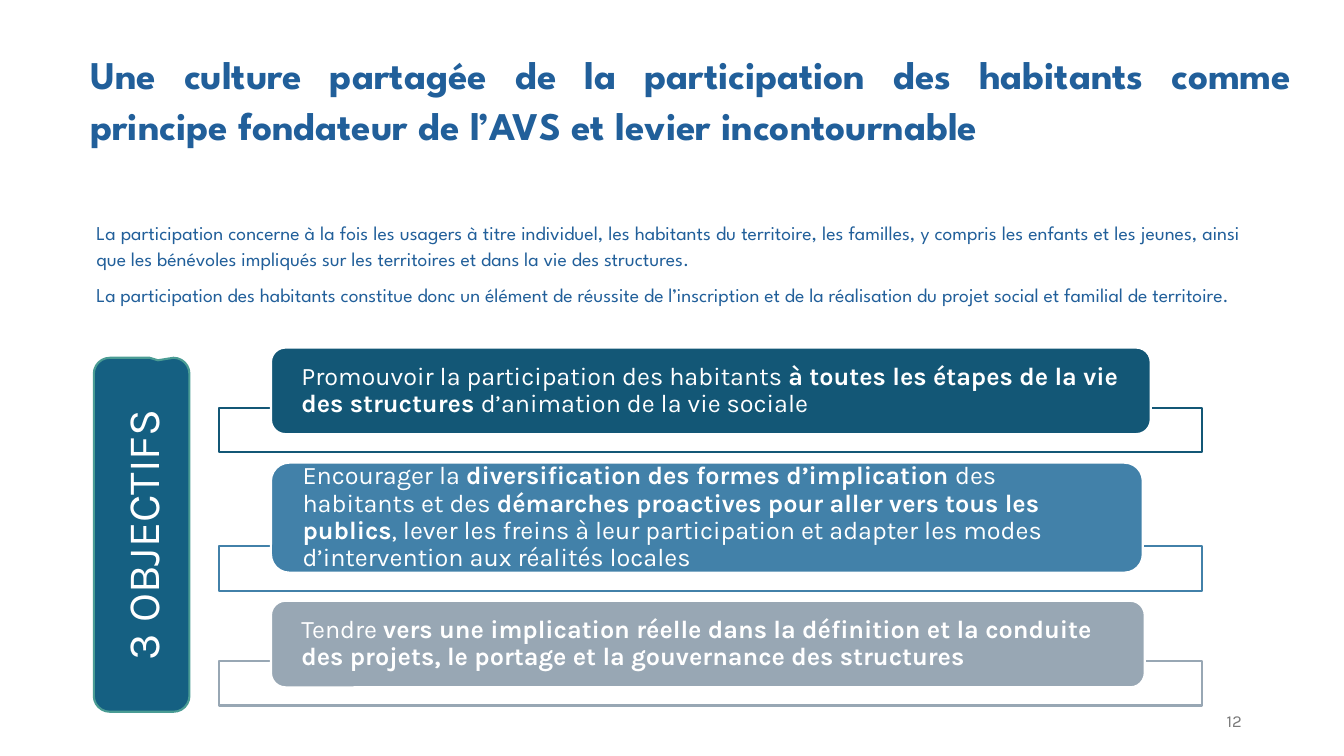
import pptx
import pptx.util
import pptx.dml.color
import pptx.enum.shapes
import pptx.enum.text
import pptx.oxml.ns
from lxml import etree

Cm = pptx.util.Cm
Pt = pptx.util.Pt
RGBColor = pptx.dml.color.RGBColor
SHAPE = pptx.enum.shapes.MSO_SHAPE
ALIGN = pptx.enum.text.PP_ALIGN
MIDDLE = pptx.enum.text.MSO_ANCHOR.MIDDLE

WHITE = RGBColor(0xFF, 0xFF, 0xFF)
TEXT_BLUE = RGBColor(0x21, 0x5F, 0x9A)
GREY = RGBColor(0x79, 0x79, 0x79)
DEEP_BLUE = RGBColor(0x13, 0x57, 0x76)
MID_BLUE = RGBColor(0x42, 0x81, 0xA9)
BLUE_GREY = RGBColor(0x98, 0xA7, 0xB4)
BANNER_BLUE = RGBColor(0x15, 0x60, 0x82)
BANNER_EDGE = RGBColor(0x4A, 0x9C, 0x94)

TITLE = ("Une culture partagée de la participation des habitants comme "
         "principe fondateur de l’AVS et levier incontournable")
INTRO = [
    "La participation concerne à la fois les usagers à titre individuel, les habitants "
    "du territoire, les familles, y compris les enfants et les jeunes, ainsi que les "
    "bénévoles impliqués sur les territoires et dans la vie des structures.",
    "La participation des habitants constitue donc un élément de réussite de "
    "l’inscription et de la réalisation du projet social et familial de territoire.",
]
# top, width and height in cm, colour, (text, bold) runs
OBJECTIVES = [
    (8.76, 22.17, 2.18, DEEP_BLUE, [
        ("Promouvoir la participation des habitants ", False),
        ("à toutes les étapes de la vie des structures ", True),
        ("d’animation de la vie sociale", False)]),
    (11.66, 21.97, 2.77, MID_BLUE, [
        ("Encourager la ", False),
        ("diversification des formes d’implication ", True),
        ("des habitants et des ", False),
        ("démarches proactives pour aller vers tous les publics", True),
        (", lever les freins à leur participation et adapter les modes "
         "d’intervention aux réalités locales", False)]),
    (15.14, 22.02, 2.18, BLUE_GREY, [
        ("Tendre ", False),
        ("vers une implication réelle dans la définition et la conduite des projets, "
         "le portage et la gouvernance des structures", True)]),
]


def set_font(p, name, size, color, bold=False):
    p.font.name = name
    p.font.size = Pt(size)
    p.font.color.rgb = color
    p.font.bold = bold


def add_text(s, left, top, width, height, texts, size, bold=False):
    """Add justified blue paragraphs."""
    sp = s.shapes.add_textbox(Cm(left), Cm(top), Cm(width), Cm(height))
    tf = sp.text_frame
    tf.word_wrap = True
    tf.text = "\n".join(texts)
    for p in tf.paragraphs:
        p.alignment = ALIGN.JUSTIFY
        p.line_spacing = 1.07
        p.space_after = Pt(8)
        set_font(p, "League Spartan", size, TEXT_BLUE, bold)


def add_box(s, kind, left, top, width, height, fill, line):
    sp = s.shapes.add_shape(kind, Cm(left), Cm(top), Cm(width), Cm(height))
    sp.shadow.inherit = False
    sp.fill.solid()
    sp.fill.fore_color.rgb = fill
    sp.line.color.rgb = line
    sp.line.width = Pt(1.5)
    return sp


def add_objective(s, top, width, height, color, runs):
    """Add a coloured card over the outlined frame that runs behind its foot."""
    frame = add_box(s, SHAPE.RECTANGLE, 5.51, top + height - 0.66, 24.79, 1.12,
                    WHITE, color)
    qn = pptx.oxml.ns.qn
    white = frame.fill._xPr.find(qn("a:solidFill")).find(qn("a:srgbClr"))
    etree.SubElement(white, qn("a:alpha"), val="90000")

    card = add_box(s, SHAPE.ROUNDED_RECTANGLE, 6.83, top, width, height, color, WHITE)
    tf = card.text_frame
    tf.word_wrap = True
    tf.vertical_anchor = MIDDLE
    tf.margin_left = tf.margin_right = Cm(0.66)
    tf.margin_top = tf.margin_bottom = 0
    p = tf.paragraphs[0]
    p.alignment = ALIGN.LEFT
    p.line_spacing = 0.9
    set_font(p, "Karla", 18, WHITE)
    for text, bold in runs:
        r = p.add_run()
        r.text = text
        r.font.bold = bold


def add_banner(s):
    sp = add_box(s, SHAPE.ROUNDED_RECTANGULAR_CALLOUT, -0.89, 12.27, 8.92, 2.41,
                 BANNER_BLUE, BANNER_EDGE)
    sp.rotation = 270
    for i, value in enumerate((0.493, 0.171, 0.167)):
        sp.adjustments[i] = value
    tf = sp.text_frame
    tf.vertical_anchor = MIDDLE
    p = tf.paragraphs[0]
    p.text = "3 OBJECTIFS"
    p.alignment = ALIGN.CENTER
    set_font(p, "Karla", 32, WHITE)


def add_page_number(s):
    sp = s.shapes.add_textbox(Cm(23.93), Cm(17.65), Cm(7.62), Cm(1.02))
    tf = sp.text_frame
    tf.word_wrap = True
    tf.vertical_anchor = MIDDLE
    p = tf.paragraphs[0]
    p.text = "12"
    p.alignment = ALIGN.RIGHT
    set_font(p, "Karla", 12, GREY)


def main():
    prs = pptx.Presentation()
    prs.slide_width = Cm(33.87)
    prs.slide_height = Cm(19.05)
    s = prs.slides.add_slide(prs.slide_layouts[6])
    add_page_number(s)
    add_text(s, 2.03, 1.07, 30.76, 2.72, [TITLE], 28, bold=True)
    add_text(s, 2.18, 5.41, 29.36, 3.05, INTRO, 14)
    for objective in OBJECTIVES:
        add_objective(s, *objective)
    add_banner(s)
    prs.save("out.pptx")


if __name__ == "__main__":
    main()
